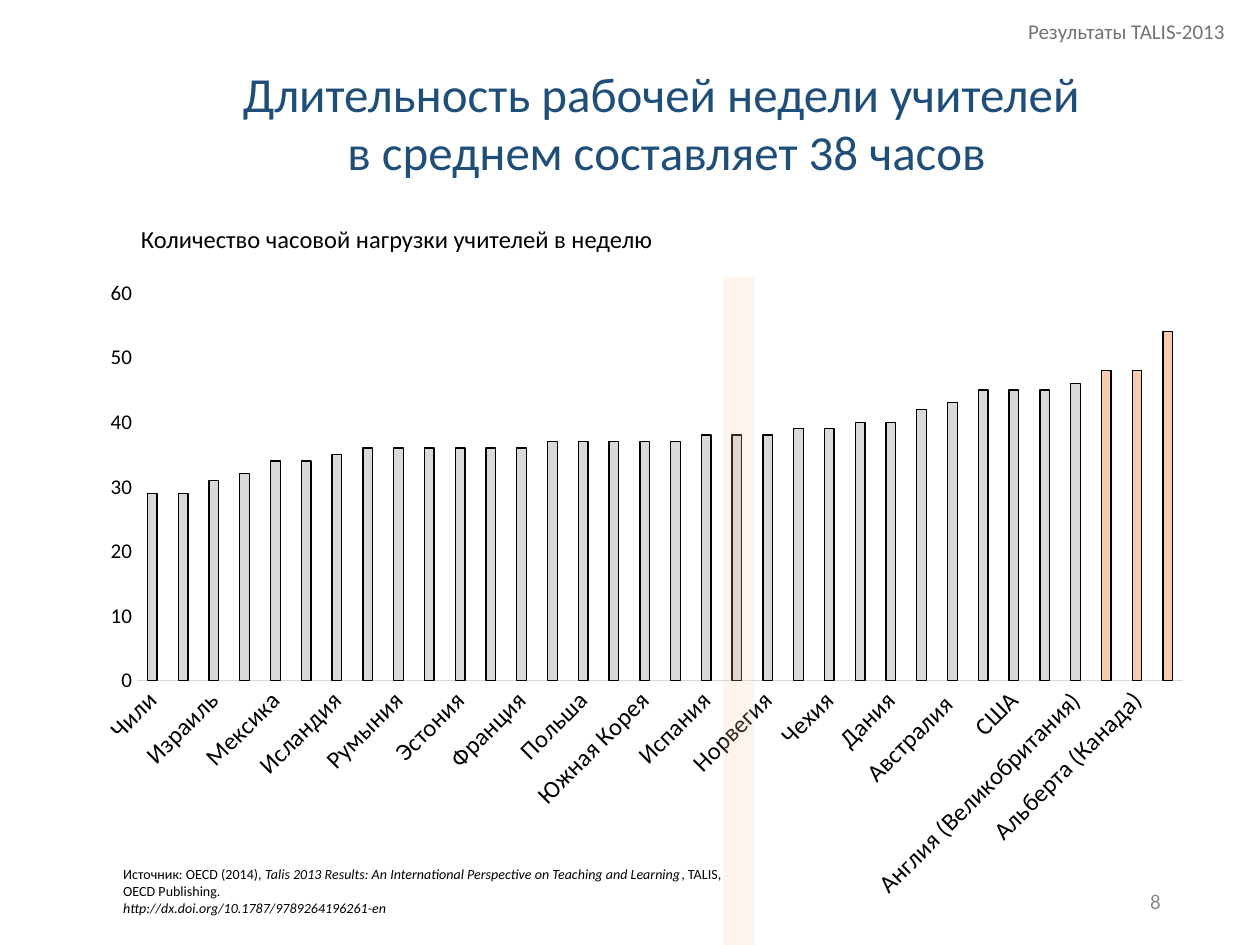
from dataclasses import dataclass

from lxml import etree
from pptx import Presentation
from pptx.chart.data import CategoryChartData
from pptx.dml.color import RGBColor
from pptx.enum.chart import XL_CHART_TYPE as ChartType, XL_TICK_MARK as TickMark
from pptx.enum.shapes import MSO_SHAPE as Shape
from pptx.enum.text import MSO_ANCHOR as Anchor, PP_ALIGN as Align
from pptx.oxml import parse_xml
from pptx.oxml.ns import nsdecls, qn
from pptx.util import Inches, Pt


@dataclass(frozen=True)
class Theme:
    font: str = "Calibri"
    ink: str = "000000"
    heading: str = "1F4E79"
    header: str = "767171"
    page: str = "8C8C8C"
    bar: str = "D9D9D9"
    accent: str = "F8CBAD"
    title_size: int = 28
    label_size: int = 14
    small_size: int = 12
    source_size: int = 8


THEME = Theme()

HOURS = {
    "Чили": 29, "Италия": 29, "Израиль": 31, "Финляндия": 32, "Мексика": 34,
    "Сербия": 34, "Исландия": 35, "Нидерланды": 36, "Румыния": 36, "Латвия": 36,
    "Эстония": 36, "Абу Даби (ОАЭ)": 36, "Франция": 36, "Бразилия": 37,
    "Польша": 37, "Бельгия (Фломанд.)": 37, "Южная Корея": 37, "Словакия": 37,
    "Испания": 38, "Среднее": 38, "Норвегия": 38, "Болгария": 39, "Чехия": 39,
    "Хорватия": 40, "Дания": 40, "Швеция": 42, "Австралия ": 43,
    "Португалия": 45, "США": 45, "Малайзия": 45, "Англия (Великобритания)": 46,
    "Синагпур": 48, "Альберта (Канада)": 48, "Япония": 54,
}
LONGEST_WEEKS = ("Синагпур", "Альберта (Канада)", "Япония")


def color(value):
    return RGBColor.from_string(value)


def inches(box):
    return [Inches(length) for length in box]


def style_font(font, size, ink=THEME.ink, italic=None):
    font.name = THEME.font
    font.size = Pt(size)
    font.color.rgb = color(ink)
    font.italic = italic


def write(frame, lines, *, size, ink=THEME.ink, align=Align.LEFT,
          anchor=Anchor.TOP, wrap=True, spacing=None, before=None):
    frame.word_wrap = wrap
    frame.vertical_anchor = anchor
    for index, line in enumerate(lines):
        paragraph = frame.add_paragraph() if index else frame.paragraphs[0]
        paragraph.alignment = align
        paragraph.line_spacing = spacing
        paragraph.space_before = before
        for text, italic in line:
            run = paragraph.add_run()
            run.text = text
            style_font(run.font, size, ink, italic)


def add_text(slide, box, lines, **style):
    write(slide.shapes.add_textbox(*inches(box)).text_frame, lines, **style)


def place_title(slide, box):
    title = slide.shapes.title
    title.left, title.top, title.width, title.height = inches(box)
    lines = [[("Длительность рабочей недели учителей ", None)],
             [("в среднем составляет 38 часов", None)]]
    write(title.text_frame, lines, size=THEME.title_size, ink=THEME.heading,
          align=Align.CENTER)


def fix_plot_area(chart, **fractions):
    plot_area = chart.plots[0]._element.getparent()
    for layout in plot_area.findall(qn("c:layout")):
        plot_area.remove(layout)
    sizes = "".join(f'<c:{key} val="{value}"/>' for key, value in fractions.items())
    plot_area.insert(0, parse_xml(
        f'<c:layout {nsdecls("c")}><c:manualLayout><c:layoutTarget val="inner"/>'
        f'<c:xMode val="edge"/><c:yMode val="edge"/>{sizes}'
        "</c:manualLayout></c:layout>"))


def place_hours_chart(slide, box):
    data = CategoryChartData(number_format="0")
    data.categories = list(HOURS)
    data.add_series("Часы в неделю", list(HOURS.values()))
    chart = slide.shapes.add_chart(
        ChartType.COLUMN_CLUSTERED, *inches(box), data).chart
    chart.has_legend = False
    chart.has_title = False
    style_font(chart.font, 10)
    fix_plot_area(chart, x=0.05, y=0.04, w=0.93, h=0.6)

    for axis, size in ((chart.category_axis, THEME.label_size),
                       (chart.value_axis, THEME.small_size)):
        axis.major_tick_mark = axis.minor_tick_mark = TickMark.NONE
        axis.has_major_gridlines = False
        style_font(axis.tick_labels.font, size)
    countries, hours = chart.category_axis, chart.value_axis
    countries.format.line.color.rgb = color(THEME.bar)
    countries.format.line.width = Pt(0.75)
    label_body = countries._element.find(qn("c:txPr")).find(qn("a:bodyPr"))
    label_body.set("rot", "-2700000")
    label_body.set("vert", "horz")
    hours.format.line.fill.background()
    hours.minimum_scale, hours.maximum_scale, hours.major_unit = 0, 60, 10
    hours.tick_labels.number_format = "0"
    hours.tick_labels.number_format_is_linked = False

    plot = chart.plots[0]
    plot.gap_width, plot.overlap = 219, -27
    plot.vary_by_categories = False
    bars = plot.series[0]
    bars.invert_if_negative = False
    accented = [bars.points[list(HOURS).index(name)] for name in LONGEST_WEEKS]
    for part, fill in [(bars, THEME.bar)] + [(bar, THEME.accent) for bar in accented]:
        part.format.fill.solid()
        part.format.fill.fore_color.rgb = color(fill)
        part.format.line.color.rgb = color(THEME.ink)
        part.format.line.width = Pt(0.75)


def place_average_band(slide, box):
    band = slide.shapes.add_shape(Shape.RECTANGLE, *inches(box))
    band.shadow.inherit = False
    band.line.fill.background()
    band.fill.solid()
    band.fill.fore_color.rgb = color(THEME.accent)
    tint = band._element.spPr.find(qn("a:solidFill"))[0]
    etree.SubElement(tint, qn("a:alpha")).set("val", "20000")


def place_source(slide, box):
    lines = [
        [("Источник: OECD (2014), ", False),
         ("Talis 2013 Results: An International Perspective on Teaching and Learning",
          True),
         (", TALIS,", False)],
        [("OECD Publishing.", False)],
        [("http://dx.doi.org/10.1787/9789264196261-en", True)],
    ]
    add_text(slide, box, lines, size=THEME.source_size)


def build_chart_slide(deck):
    slide = deck.slides.add_slide(deck.slide_layouts[5])
    place_title(slide, (0.75, 0.45, 9.08, 1.04))
    place_hours_chart(slide, (0.64, 2.12, 8.93, 5.13))
    place_average_band(slide, (5.74, 2.2, 0.25, 5.3))
    add_text(slide, (1.02, 1.73, 7.73, 0.34),
             [[("Количество часовой нагрузки учителей в неделю", None)]],
             size=THEME.label_size)
    place_source(slide, (0.88, 6.82, 9.0, 0.5))
    add_text(slide, (8.05, 0.12, 1.78, 0.28), [[("Результаты TALIS-2013", None)]],
             size=THEME.small_size, ink=THEME.header, align=Align.CENTER,
             wrap=False, spacing=0.9, before=Pt(10))
    add_text(slide, (7.06, 6.95, 2.25, 0.4), [[("8", None)]],
             size=THEME.small_size, ink=THEME.page, align=Align.RIGHT,
             anchor=Anchor.MIDDLE)


def main():
    deck = Presentation()
    deck.slide_width, deck.slide_height = Inches(10), Inches(7.5)
    build_chart_slide(deck)
    deck.save("out.pptx")


if __name__ == "__main__":
    main()
